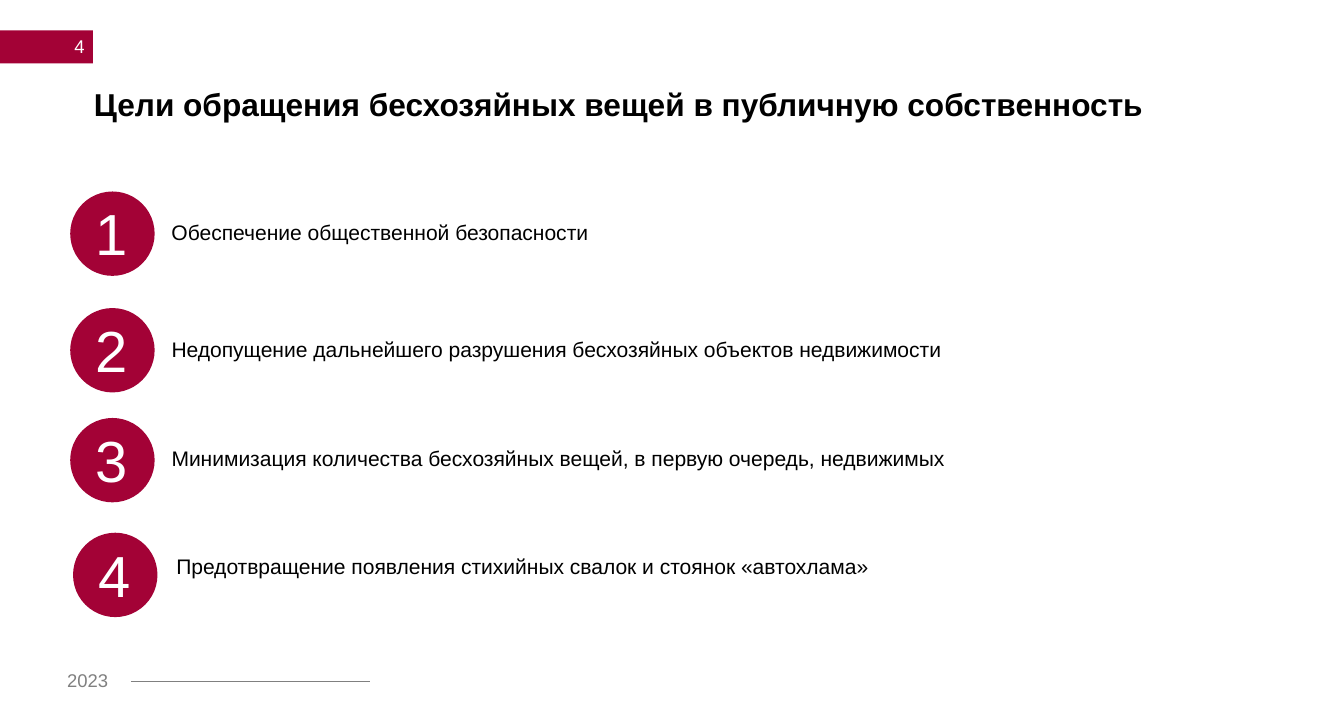
from pptx import Presentation
from pptx.dml.color import RGBColor
from pptx.enum.shapes import MSO_CONNECTOR, MSO_SHAPE
from pptx.enum.text import MSO_ANCHOR, MSO_AUTO_SIZE, PP_ALIGN
from pptx.oxml.ns import qn
from pptx.util import Inches, Pt
from lxml import etree

CRIMSON = RGBColor(0xA3, 0x02, 0x36)
GRAY = RGBColor(0x80, 0x80, 0x80)
WHITE = RGBColor(0xFF, 0xFF, 0xFF)
BLACK = RGBColor(0x00, 0x00, 0x00)


def write_text(shape, text, size, color, bold=False):
    shape.text_frame.text = text
    font = shape.text_frame.paragraphs[0].font
    formats = {"name": "Arial", "size": Pt(size), "bold": bold}
    for name, value in formats.items():
        setattr(font, name, value)
    font.color.rgb = color


def add_filled_shape(shapes, kind, left, top, width, height):
    shape = shapes.add_shape(kind, Inches(left), Inches(top), Inches(width), Inches(height))
    shape.shadow.inherit = False
    shape.fill.solid()
    shape.fill.fore_color.rgb = CRIMSON
    shape.line.fill.background()
    return shape


presentation = Presentation()
presentation.slide_width = Inches(14.17)
presentation.slide_height = Inches(7.48)
slide = presentation.slides.add_slide(presentation.slide_layouts[5])

# Page number tab
add_filled_shape(slide.shapes, MSO_SHAPE.RECTANGLE, 0, 0.32, 0.98, 0.35)
page_number = slide.shapes.add_textbox(Inches(0.18), Inches(0.29), Inches(0.81), Inches(0.4))
write_text(page_number, "4", 14, WHITE)
page_number.text_frame.word_wrap = True
page_number.text_frame.vertical_anchor = MSO_ANCHOR.MIDDLE
page_number.text_frame.paragraphs[0].alignment = PP_ALIGN.RIGHT

# Title
title = slide.shapes.title
title.left, title.top = Inches(0.99), Inches(0.94)
title.width, title.height = Inches(12.49), Inches(0.56)
write_text(title, "Цели обращения бесхозяйных вещей в публичную собственность", 24, BLACK, bold=True)
title_frame = title.text_frame
for side in ("left", "top", "right", "bottom"):
    setattr(title_frame, f"margin_{side}", 0)
title_frame.auto_size = MSO_AUTO_SIZE.NONE
title_frame.vertical_anchor = MSO_ANCHOR.TOP
title_frame.paragraphs[0].alignment = PP_ALIGN.LEFT
title_frame.paragraphs[0].line_spacing = 0.9

# Numbered goals: circle left and top, text left, top and width, wording
goals = [
    (0.74, 2.02, 1.71, 2.27, 7.73, "Обеспечение общественной безопасности"),
    (0.74, 3.25, 1.71, 3.5, 9.42,
     "Недопущение дальнейшего разрушения бесхозяйных объектов недвижимости"),
    (0.74, 4.41, 1.71, 4.65, 8.81,
     "Минимизация количества бесхозяйных вещей, в первую очередь, недвижимых"),
    (0.77, 5.62, 1.76, 5.79, 8.81,
     "Предотвращение появления стихийных свалок и стоянок «автохлама»"),
]
for number, (left, top, text_left, text_top, text_width, wording) in enumerate(goals, start=1):
    badge = slide.shapes.add_group_shape()
    add_filled_shape(badge.shapes, MSO_SHAPE.OVAL, left, top, 0.89, 0.89)
    digit = badge.shapes.add_textbox(
        Inches(left + 0.17), Inches(top + 0.02), Inches(0.55), Inches(0.84))
    write_text(digit, str(number), 44, WHITE)
    digit.text_frame.word_wrap = False

    goal = slide.shapes.add_textbox(
        Inches(text_left), Inches(text_top), Inches(text_width), Inches(0.37))
    write_text(goal, wording, 16, BLACK)
    goal.text_frame.word_wrap = True

# Footer with year and rule
year = slide.shapes.add_textbox(Inches(0.61), Inches(7.01), Inches(0.67), Inches(0.34))
write_text(year, "2023", 14, GRAY)
year.text_frame.word_wrap = True
footer_line = slide.shapes.add_connector(
    MSO_CONNECTOR.STRAIGHT, Inches(1.38), Inches(7.19), Inches(3.9), Inches(7.19))
footer_line.line.color.rgb = GRAY
footer_line.line.width = Pt(1.5)
etree.SubElement(footer_line._element.spPr, qn("a:effectLst"))

presentation.save("out.pptx")
